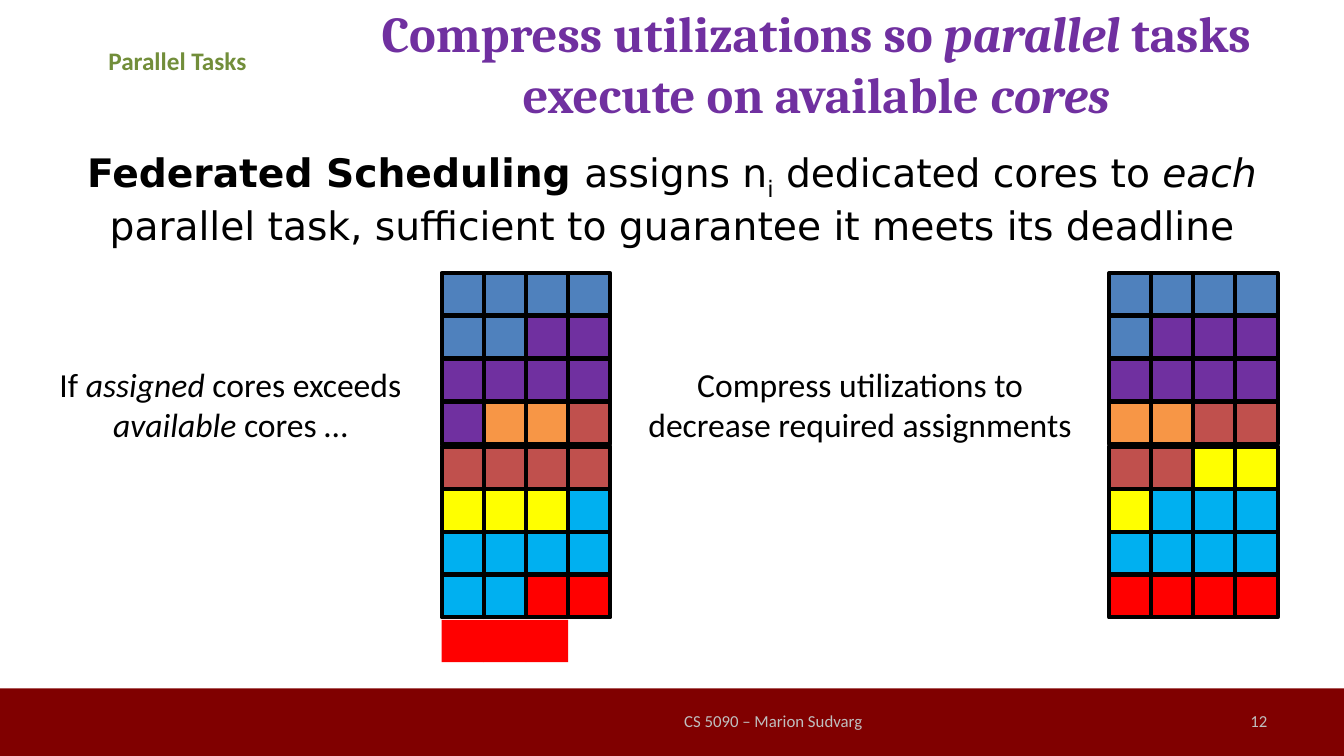
import pptx
import pptx.dml.color
import pptx.enum.shapes
import pptx.enum.text
import pptx.oxml
import pptx.oxml.ns
import pptx.util

Inches = pptx.util.Inches
Align = pptx.enum.text.PP_ALIGN
Anchor = pptx.enum.text.MSO_ANCHOR
RECTANGLE = pptx.enum.shapes.MSO_SHAPE.RECTANGLE

theme = {
    "colors": {
        "band": "800000", "footer": "BFBFBF", "topic": "728E3A", "black": "000000",
        "blue": "4F81BD", "purple": "7030A0", "orange": "F79646", "brick": "C0504D",
        "yellow": "FFFF00", "cyan": "00B0F0", "red": "FF0000",
    },
    "fonts": {"title": "Cambria", "body": "DejaVu Sans", "label": "Calibri"},
    "sizes": {"title": 36, "body": 28, "label": 24, "topic": 18, "footer": 12},
}


def color(name):
    return pptx.dml.color.RGBColor.from_string(theme["colors"][name])


def write(shape, box, runs, font, size, color_name, align=Align.CENTER, anchor=Anchor.TOP):
    shape.left, shape.top, shape.width, shape.height = [Inches(length) for length in box]
    text_frame = shape.text_frame
    text_frame.word_wrap = True
    text_frame.auto_size = pptx.enum.text.MSO_AUTO_SIZE.NONE
    text_frame.vertical_anchor = anchor
    paragraph = text_frame.paragraphs[0]
    paragraph.alignment = align
    paragraph.space_before = pptx.util.Pt(0)
    for text, style in runs:
        run = paragraph.add_run()
        run.text = text
        run.font.name = theme["fonts"][font]
        run.font.size = pptx.util.Pt(theme["sizes"][size])
        run.font.color.rgb = color(color_name)
        run.font.bold = style == "bold" or size in ("title", "topic")
        run.font.italic = style == "italic"
        if style == "subscript":
            run.font._element.set("baseline", "-25000")


presentation = pptx.Presentation()
presentation.slide_width = Inches(13.33)
presentation.slide_height = Inches(7.5)
slide = presentation.slides.add_slide(presentation.slide_layouts[1])

band = slide.shapes.add_shape(RECTANGLE, 0, Inches(6.83), Inches(13.33), Inches(0.67))
band.shadow.inherit = False
band.fill.solid()
band.fill.fore_color.rgb = color("band")
band.line.fill.background()

write(slide.shapes.title, (3.09, 0, 10.01, 1.25), [
    ("Compress utilizations so ", ""), ("parallel", "italic"),
    (" tasks execute on available ", ""), ("cores", "italic"),
], "title", "title", "purple", anchor=Anchor.MIDDLE)

body = slide.placeholders[1]
body_properties = body.text_frame.paragraphs[0]._p.get_or_add_pPr()
body_properties.set("marL", "0")
body_properties.set("indent", "0")
body_properties.append(pptx.oxml.parse_xml(f'<a:buNone {pptx.oxml.ns.nsdecls("a")}/>'))
write(body, (0.23, 1.42, 12.87, 5.28), [
    ("Federated Scheduling ", "bold"), ("assigns n", ""), ("i", "subscript"),
    (" dedicated cores to ", ""), ("each", "italic"),
    (" parallel task, sufficient to guarantee it meets its deadline", ""),
], "body", "body", "black")

labels = [
    ((0.67, 0.4, 2.18, 0.4), [("Parallel Tasks", "")], "topic", "topic", Align.CENTER, Anchor.TOP),
    ((0.41, 3.56, 3.75, 0.91), [
        ("If ", ""), ("assigned", "italic"), (" cores exceeds ", ""),
        ("available", "italic"), (" cores …", ""),
    ], "label", "black", Align.CENTER, Anchor.TOP),
    ((6.29, 3.56, 4.48, 0.91), [("Compress utilizations to decrease required assignments", "")],
     "label", "black", Align.CENTER, Anchor.TOP),
    ((5.56, 6.95, 4.22, 0.4), [("CS 5090 – Marion Sudvarg", "")],
     "footer", "footer", Align.CENTER, Anchor.MIDDLE),
    ((9.56, 6.95, 3.11, 0.4), [("12", "")], "footer", "footer", Align.RIGHT, Anchor.MIDDLE),
]
for box, runs, size, color_name, align, anchor in labels:
    label = slide.shapes.add_textbox(0, 0, 0, 0)
    write(label, box, runs, "label", size, color_name, align, anchor)

columns, available_cores = 4, 32
core_size, column_step = 0.42, 1.67 / 4
grid_top, row_step, rows_per_block, block_step = 2.71, 1.7 / 4, 4, 1.72
tasks = ["blue", "purple", "orange", "brick", "yellow", "cyan", "red"]
assignments = [
    (4.38, [6, 7, 2, 5, 3, 7, 5]),
    (11, [5, 7, 2, 4, 3, 7, 4]),
]
for grid_left, core_counts in assignments:
    grid = slide.shapes.add_group_shape()
    cores = [task for task, count in zip(tasks, core_counts) for _ in range(count)]
    for index, task in enumerate(cores):
        row, column = divmod(index, columns)
        block, block_row = divmod(row, rows_per_block)
        left = grid_left + column * column_step
        top = grid_top + block * block_step + block_row * row_step
        core = grid.shapes.add_shape(
            RECTANGLE, Inches(left), Inches(top), Inches(core_size), Inches(core_size))
        core.shadow.inherit = False
        core.fill.solid()
        core.fill.fore_color.rgb = color(task)
        if index < available_cores:
            core.line.color.rgb = color("black")
            core.line.width = pptx.util.Pt(3)
        else:
            core.line.fill.background()

presentation.save("out.pptx")
